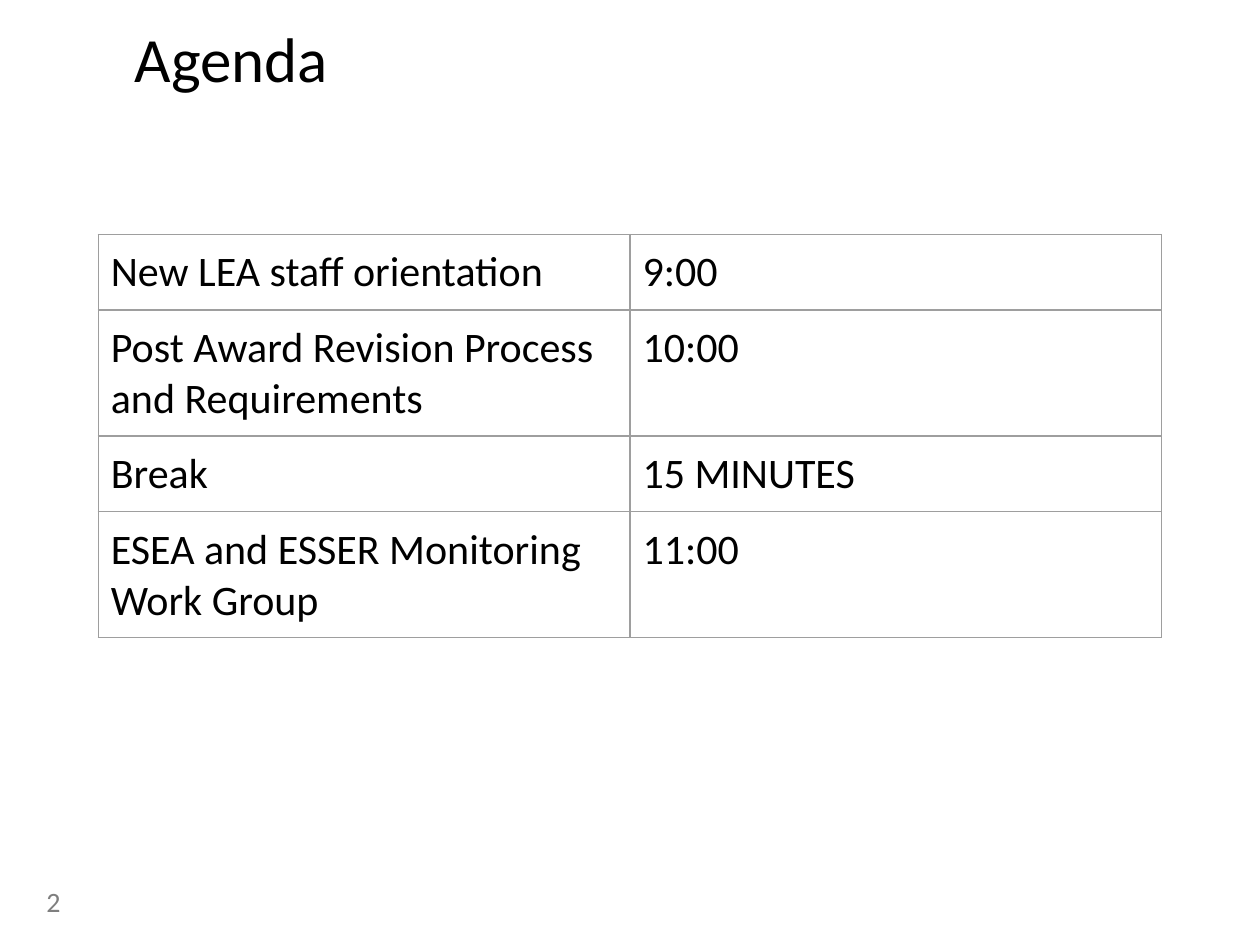
import pptx
import pptx.dml.color
import pptx.enum.text
import pptx.oxml
import pptx.oxml.ns
import pptx.util

Inches = pptx.util.Inches
Pt = pptx.util.Pt
RGBColor = pptx.dml.color.RGBColor

BLACK = RGBColor(0x00, 0x00, 0x00)
GRAY = RGBColor(0x7F, 0x7F, 0x7F)
BORDER = RGBColor(0x9E, 0x9E, 0x9E)
FONT = "Calibri"

AGENDA = [
    ("New LEA staff orientation", "9:00", 0.6),
    ("Post Award Revision Process and Requirements", "10:00", 1),
    ("Break", "15 MINUTES", 0.6),
    ("ESEA and ESSER Monitoring Work Group", "11:00", 1),
]


def add_run(p, text, size, color):
    r = p.add_run()
    r.text = text
    r.font.name = FONT
    r.font.size = Pt(size)
    r.font.color.rgb = color


def add_text_box(s, box, text, size, color):
    sp = s.shapes.add_textbox(*map(Inches, box))
    tf = sp.text_frame
    tf.word_wrap = True
    add_run(tf.paragraphs[0], text, size, color)
    return tf


def add_title(s, box):
    tf = add_text_box(s, box, "Agenda", 36, BLACK)
    tf.margin_left = tf.margin_right = tf.margin_top = tf.margin_bottom = 0
    tf.paragraphs[0].line_spacing = 0.9


def add_slide_number(s, box):
    tf = add_text_box(s, box, "2", 16, GRAY)
    tf.vertical_anchor = pptx.enum.text.MSO_ANCHOR.MIDDLE


def set_borders(cell):
    tc_pr = cell._tc.get_or_add_tcPr()
    for i, side in enumerate(("lnL", "lnR", "lnT", "lnB")):
        tc_pr.insert(i, pptx.oxml.parse_xml(
            f'<a:{side} {pptx.oxml.ns.nsdecls("a")} w="{Pt(0.75)}">'
            f'<a:solidFill><a:srgbClr val="{BORDER}"/></a:solidFill></a:{side}>'))


def add_agenda(s, box):
    table = s.shapes.add_table(len(AGENDA), 2, *map(Inches, box)).table
    table.first_row = table.horz_banding = False
    for row, (topic, time, height) in zip(table.rows, AGENDA):
        row.height = Inches(height)
        for cell, text in zip(row.cells, (topic, time)):
            cell.margin_left = cell.margin_right = Inches(0.1)
            cell.margin_top = cell.margin_bottom = Inches(0.1)
            cell.fill.background()
            set_borders(cell)
            add_run(cell.text_frame.paragraphs[0], text, 24, BLACK)


def main():
    prs = pptx.Presentation()
    prs.slide_width = Inches(10)
    prs.slide_height = Inches(7.5)
    s = prs.slides.add_slide(prs.slide_layouts[6])
    add_title(s, (1.07, 0.22, 5.91, 0.82))
    add_slide_number(s, (0.27, 6.95, 2.25, 0.4))
    add_agenda(s, (0.78, 1.86, 8.44, 3.2))
    prs.save("out.pptx")


if __name__ == "__main__":
    main()
